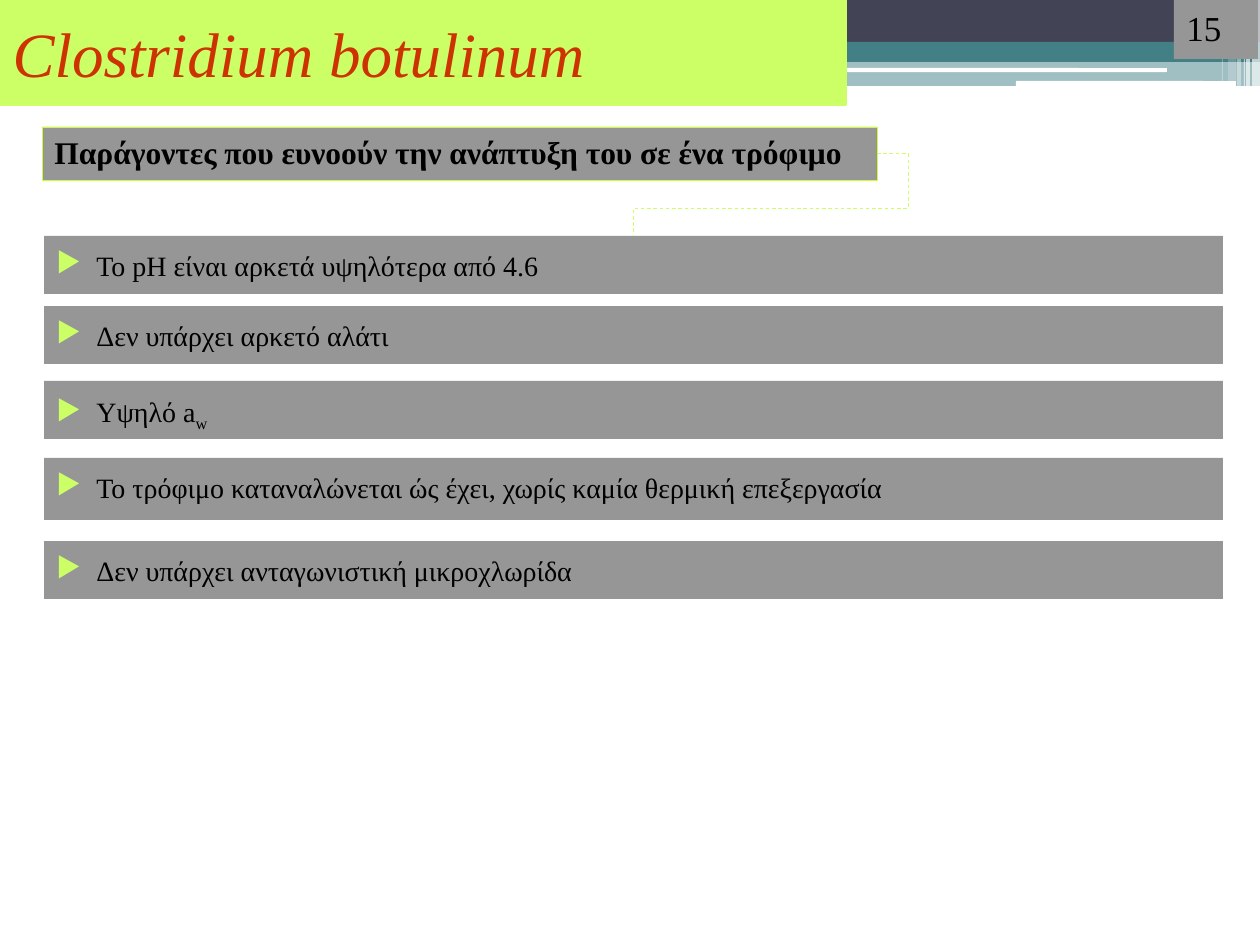
from dataclasses import dataclass

from lxml import etree
from pptx import Presentation
from pptx.dml.color import RGBColor
from pptx.enum.dml import MSO_LINE
from pptx.enum.shapes import MSO_CONNECTOR, MSO_SHAPE
from pptx.enum.text import MSO_ANCHOR, MSO_AUTO_SIZE, PP_ALIGN
from pptx.oxml.ns import qn
from pptx.util import Emu, Pt

RECT, ROUNDED = MSO_SHAPE.RECTANGLE, MSO_SHAPE.ROUNDED_RECTANGLE
ELBOW, DASH = MSO_CONNECTOR.ELBOW, MSO_LINE.DASH
TOP, MIDDLE = MSO_ANCHOR.TOP, MSO_ANCHOR.MIDDLE
LEFT, NO_FIT = PP_ALIGN.LEFT, MSO_AUTO_SIZE.NONE
RIGHT_SITE, TOP_SITE = 3, 0


@dataclass(frozen=True)
class Theme:
    """Colours, font and type sizes of the slide."""
    font: str = "Times New Roman"
    navy: str = "424456"
    teal: str = "438086"
    white: str = "FFFFFF"
    lime: str = "CCFF66"
    bright_lime: str = "CCFF33"
    red: str = "CC3300"
    grey: str = "969696"
    black: str = "000000"
    title_size: int = 36
    number_size: int = 20
    heading_size: int = 18
    factor_size: int = 16


THEME = Theme()
FACTORS = [
    (0, 58, "Το pH είναι αρκετά υψηλότερα από 4.6", ""),
    (70, 58, "Δεν υπάρχει αρκετό αλάτι", ""),
    (145, 58, "Υψηλό a", "w"),
    (222, 62, "Το τρόφιμο καταναλώνεται ώς έχει, χωρίς καμία θερμική επεξεργασία", ""),
    (305, 58, "Δεν υπάρχει ανταγωνιστική μικροχλωρίδα", ""),
]


def px(length):
    """Turn px at 126 to the inch into EMU."""
    return Emu(round(length * 914400 / 126))


def rgb(colour):
    """Turn a hex string into a colour."""
    return RGBColor.from_string(colour)


def add_block(slide, box, colour, opacity=100, preset=RECT):
    """Add a flat filled shape without outline."""
    block = slide.shapes.add_shape(preset, *map(px, box))
    block.shadow.inherit = False
    block.fill.solid()
    block.fill.fore_color.rgb = rgb(colour)
    block.line.fill.background()
    if opacity < 100:
        tint = block.fill._xPr.find(qn("a:solidFill"))[0]
        etree.SubElement(tint, qn("a:alpha")).set("val", str(opacity * 1000))
    return block


def outline(shape, colour, width):
    """Give a shape or connector a solid line."""
    shape.line.color.rgb = rgb(colour)
    shape.line.width = Pt(width)


def write(shape, text, size, colour, anchor=TOP, bold=False, italic=False):
    """Write one left-aligned paragraph and return it."""
    frame = shape.text_frame
    frame.word_wrap = True
    frame.auto_size = NO_FIT
    frame.vertical_anchor = anchor
    paragraph = frame.paragraphs[0]
    paragraph.alignment = LEFT
    paragraph.add_run().text = text
    font = paragraph.font
    font.name, font.size = THEME.font, Pt(size)
    font.bold, font.italic = bold, italic
    font.color.rgb = rgb(colour)
    return paragraph


def add_banner(slide, left, top, width):
    """Draw the striped band with its white rules and edge highlights."""
    middle, half = left + 746, width - 746
    for x, y, w, h, colour, opacity, preset in [
        (left, 50, width, 11, THEME.teal, 50, RECT),
        (left, 0, width, 43, THEME.navy, 100, RECT),
        (left, 42, width, 13, THEME.teal, 100, RECT),
        (middle, 49, half, 13, THEME.teal, 100, RECT),
        (middle, 61, half, 25, THEME.teal, 50, RECT),
        (middle, 68, 421, 4, THEME.white, 100, ROUNDED),
        (left + 1016, 81, 220, 5, THEME.white, 100, ROUNDED),
    ]:
        add_block(slide, (x, top + y, w, h), colour, opacity, preset)
    for x, w, h, opacity in [(1252, 8, 86, 65), (1246, 4, 86, 65), (1244, 1, 86, 60),
                             (1237, 4, 86, 40), (1228, 8, 81, 20), (1222, 1, 81, 30)]:
        add_block(slide, (left + x, top, w, h), THEME.white, opacity)


def place_title(slide, box):
    """Move the title placeholder in front of the banner and format it."""
    title = slide.shapes.title
    title.element.getparent().append(title.element)
    title.left, title.top, title.width, title.height = map(px, box)
    title.fill.solid()
    title.fill.fore_color.rgb = rgb(THEME.lime)
    outline(title, THEME.lime, 0.75)
    write(title, "Clostridium botulinum", THEME.title_size, THEME.red, MIDDLE, italic=True)


def add_page_number(slide, box):
    """Add the page number tile."""
    write(add_block(slide, box, THEME.grey), "15", THEME.number_size, THEME.black)


def add_heading(slide, box):
    """Add the outlined heading bar."""
    heading = add_block(slide, box, THEME.grey)
    outline(heading, THEME.bright_lime, 0.25)
    write(heading, "Παράγοντες που ευνοούν την ανάπτυξη του σε ένα τρόφιμο",
          THEME.heading_size, THEME.black, bold=True)
    return heading


def add_bullet(paragraph):
    """Give a paragraph a hanging lime triangle."""
    properties = paragraph._p.get_or_add_pPr()
    properties.set("marL", str(px(40)))
    properties.set("indent", str(px(-40)))
    marker = etree.Element(qn("a:buClr"))
    etree.SubElement(marker, qn("a:srgbClr")).set("val", THEME.lime)
    symbol = etree.Element(qn("a:buChar"))
    symbol.set("char", "▶")
    properties.insert(0, marker)
    properties.insert(1, symbol)


def add_factors(slide, left, top, width):
    """Add one bulleted bar for each factor and return the bars."""
    bars = []
    for offset, height, text, subscript in FACTORS:
        bar = add_block(slide, (left, top + offset, width, height), THEME.grey)
        add_bullet(bar.text_frame.paragraphs[0])
        paragraph = write(bar, text, THEME.factor_size, THEME.black)
        paragraph.line_spacing = 1.2
        if subscript:
            run = paragraph.add_run()
            run.text = subscript
            run._r.get_or_add_rPr().set("baseline", "-25000")
        bars.append(bar)
    return bars


def link(slide, heading, first_factor):
    """Join the heading to the first factor by a dashed elbow."""
    elbow = slide.shapes.add_connector(ELBOW, px(877), px(153), px(634), px(236))
    elbow.begin_connect(heading, RIGHT_SITE)
    elbow.end_connect(first_factor, TOP_SITE)
    outline(elbow, THEME.lime, 0.5)
    elbow.line.dash_style = DASH
    properties = elbow._element.spPr
    etree.SubElement(properties, qn("a:effectLst"))
    geometry = properties.find(qn("a:prstGeom"))
    geometry.set("prst", "bentConnector4")
    guides = geometry.find(qn("a:avLst"))
    for name, value in (("adj1", -12900), ("adj2", 66200)):
        guide = etree.SubElement(guides, qn("a:gd"))
        guide.set("name", name)
        guide.set("fmla", f"val {value}")


def main():
    """Build and save the slide."""
    deck = Presentation()
    deck.slide_width, deck.slide_height = px(1260), px(945)
    slide = deck.slides.add_slide(deck.slide_layouts[5])
    add_banner(slide, 0, 0, 1260)
    place_title(slide, (0, 0, 846, 105))
    add_page_number(slide, (1174, 0, 84, 59))
    heading = add_heading(slide, (42, 127, 835, 53))
    factors = add_factors(slide, 44, 236, 1179)
    link(slide, heading, factors[0])
    deck.save("out.pptx")


if __name__ == "__main__":
    main()
